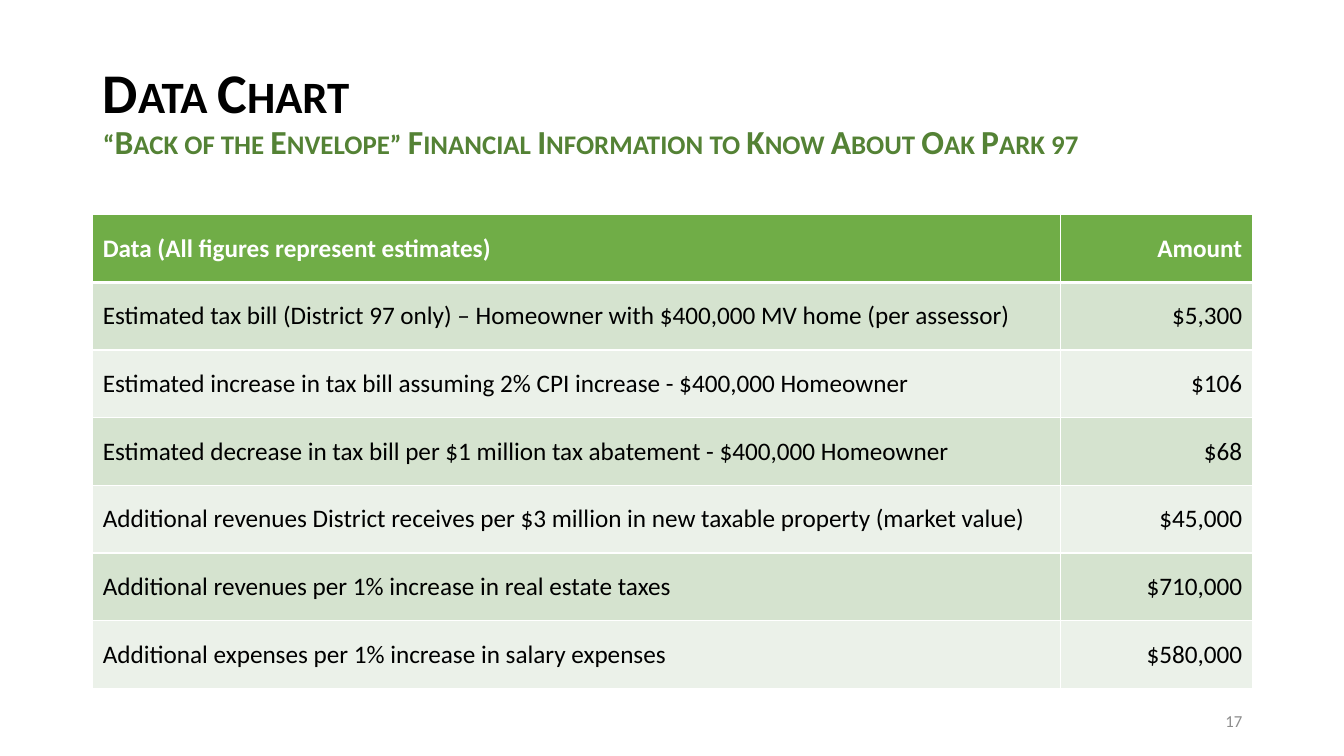
from copy import deepcopy

from lxml import etree
from pptx import Presentation
from pptx.dml.color import RGBColor
from pptx.enum.text import MSO_ANCHOR, MSO_AUTO_SIZE, PP_ALIGN
from pptx.oxml.ns import qn
from pptx.util import Pt

LEFT, RIGHT = PP_ALIGN.LEFT, PP_ALIGN.RIGHT
MIDDLE = MSO_ANCHOR.MIDDLE
NO_FIT = MSO_AUTO_SIZE.NONE
PX = 9144  # EMU in one px, 100 px to the inch
FONT = "Calibri"
COLORS = {
    "ink": "000000", "white": "FFFFFF", "accent": "548235",
    "head": "70AD47", "dark": "D5E3CF", "light": "EBF1E9", "page": "8C8C8C",
}
ROWS = [
    ("Data (All figures represent estimates)", "Amount"),
    ("Estimated tax bill (District 97 only) – Homeowner with $400,000 MV home (per assessor)", "$5,300"),
    ("Estimated increase in tax bill assuming 2% CPI increase - $400,000 Homeowner", "$106"),
    ("Estimated decrease in tax bill per $1 million tax abatement - $400,000 Homeowner", "$68"),
    ("Additional revenues District receives per $3 million in new taxable property (market value)", "$45,000"),
    ("Additional revenues per 1% increase in real estate taxes", "$710,000"),
    ("Additional expenses per 1% increase in salary expenses", "$580,000"),
]


def rgb(name):
    return RGBColor.from_string(COLORS[name])


def px(*sizes):
    return [size * PX for size in sizes]


def write(para, text, size=18, color="ink", bold=False, align=LEFT, caps=False):
    para.alignment = align
    run = para.add_run()
    run.text = text
    font = run.font
    font.name, font.size, font.bold = FONT, Pt(size), bold
    font.color.rgb = rgb(color)
    if caps:
        run._r.get_or_add_rPr().set("cap", "small")
    return run


def edge(cell, side, width):
    line = etree.SubElement(cell._tc.get_or_add_tcPr(), qn("a:ln" + side), w=str(Pt(width)))
    fill = etree.SubElement(line, qn("a:solidFill"))
    etree.SubElement(fill, qn("a:srgbClr"), val=COLORS["white"])


def heading(slide, box):
    title = slide.shapes.title
    title.left, title.top, title.width, title.height = px(*box)
    frame = title.text_frame
    frame.word_wrap, frame.auto_size = True, NO_FIT
    frame.vertical_anchor = MIDDLE
    para = frame.paragraphs[0]
    para.line_spacing = 0.9
    first = write(para, "Data Chart", size=40, bold=True, caps=True)
    para.add_line_break()
    # The break keeps the size of the first line
    para._p.findall(qn("a:br"))[0].append(deepcopy(first._r.rPr))
    write(para, "“Back of the Envelope” Financial Information to Know About Oak Park 97",
          size=24, color="accent", bold=True, caps=True)


def figures(slide, box, side=190):
    table = slide.shapes.add_table(len(ROWS), 2, *px(*box)).table
    table.columns[0].width, table.columns[1].width = px(box[2] - side, side)
    for r, row in enumerate(ROWS):
        head = r == 0
        fill = "head" if head else ("light", "dark")[r % 2]
        for c, text in enumerate(row):
            cell = table.cell(r, c)
            for name in "LRTB":
                thick = (head and name == "B") or (r == 1 and name == "T")
                edge(cell, name, 3 if thick else 1)
            cell.fill.solid()
            cell.fill.fore_color.rgb = rgb(fill)
            cell.vertical_anchor = MIDDLE
            write(cell.text_frame.paragraphs[0], text, bold=head,
                  color="white" if head else "ink", align=(LEFT, RIGHT)[c])


def number(slide, box):
    frame = slide.shapes.add_textbox(*px(*box)).text_frame
    frame.word_wrap = True
    frame.vertical_anchor = MIDDLE
    write(frame.paragraphs[0], "17", size=12, color="page", align=RIGHT)


def main():
    deck = Presentation()
    deck.slide_width, deck.slide_height = px(1333, 750)
    slide = deck.slides.add_slide(deck.slide_layouts[5])
    left, width = 92, 1150
    # Title, table and page number share one column
    heading(slide, (left, 40, width, 145))
    figures(slide, (left, 213, width, 470))
    number(slide, (left + width - 300, 695, 300, 40))
    deck.save("out.pptx")


if __name__ == "__main__":
    main()
